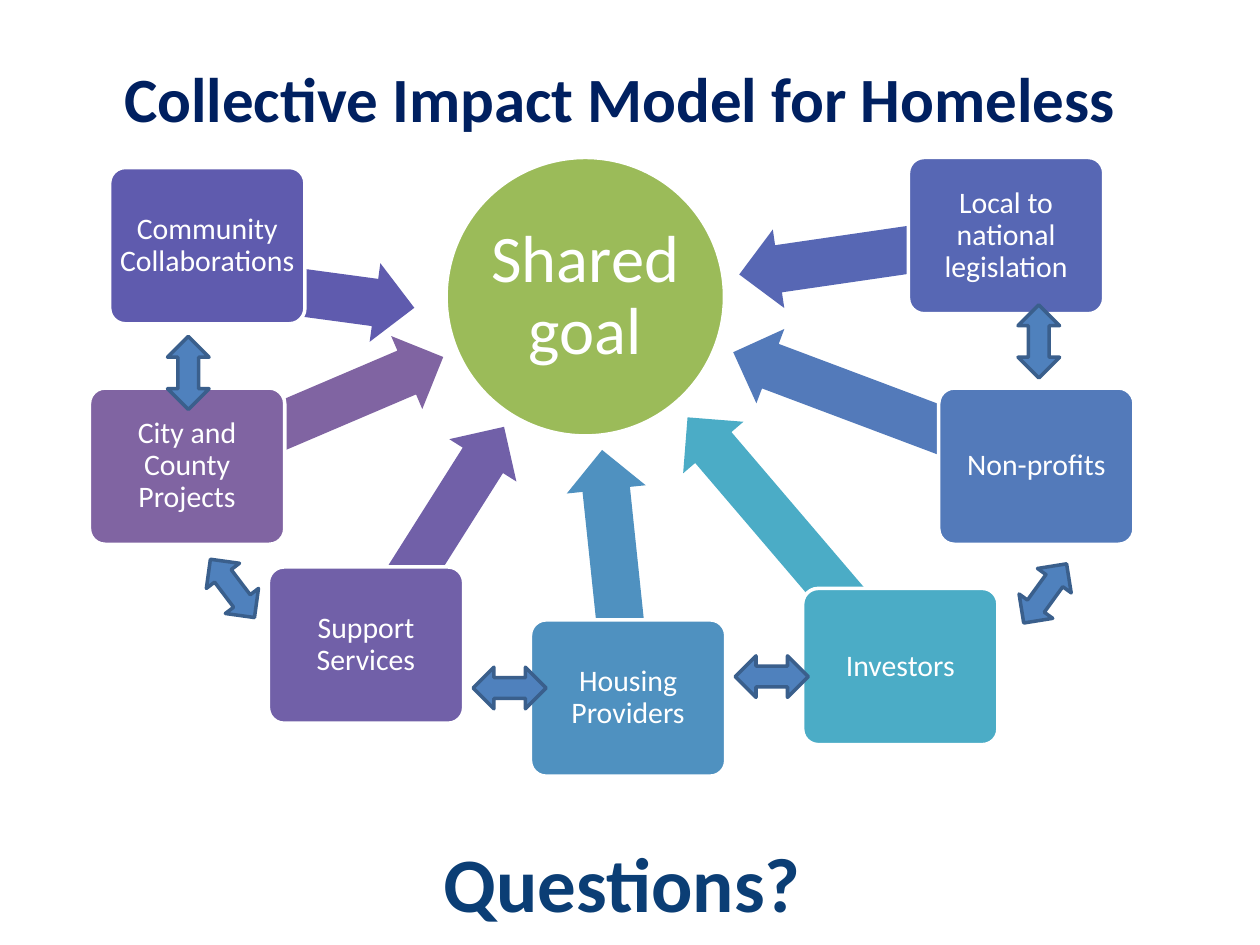
from math import cos, radians, sin

from pptx import Presentation
from pptx.dml.color import RGBColor
from pptx.enum.shapes import MSO_SHAPE
from pptx.enum.text import MSO_ANCHOR, MSO_AUTO_SIZE, PP_ALIGN
from pptx.util import Inches, Pt

ELLIPSE = MSO_SHAPE.OVAL
ROUNDED = MSO_SHAPE.ROUNDED_RECTANGLE
LEFT_ARROW = MSO_SHAPE.LEFT_ARROW
UP_DOWN_ARROW = MSO_SHAPE.UP_DOWN_ARROW
CENTER = PP_ALIGN.CENTER
TOP, MIDDLE = MSO_ANCHOR.TOP, MSO_ANCHOR.MIDDLE
NO_AUTOFIT = MSO_AUTO_SIZE.NONE

FONT = "Calibri"
WHITE = RGBColor(0xFF, 0xFF, 0xFF)
NAVY = RGBColor(0x00, 0x20, 0x60)
DEEP_BLUE = RGBColor(0x0B, 0x3E, 0x75)
GREEN = RGBColor(0x9B, 0xBB, 0x59)
PURPLE = RGBColor(0x80, 0x64, 0xA2)
VIOLET = RGBColor(0x71, 0x60, 0xA8)
INDIGO = RGBColor(0x5F, 0x5B, 0xAE)
SLATE_BLUE = RGBColor(0x57, 0x67, 0xB4)
MID_BLUE = RGBColor(0x53, 0x7A, 0xBA)
SKY_BLUE = RGBColor(0x4F, 0x91, 0xC0)
TEAL = RGBColor(0x4B, 0xAC, 0xC6)
LINK_FILL = RGBColor(0x4F, 0x81, 0xBD)
LINK_LINE = RGBColor(0x3A, 0x5F, 0x8C)

BOX_W, BOX_H = 1.55, 1.24
ARROW_H = 0.63
LINK_W, LINK_H = 0.33, 0.58

# label, left, top, colour, arrow length, arrow rotation, arrow tail offset from box centre
PARTNERS = [
    ("City and County Projects", 0.71, 3.08, PURPLE, 2.21, 156.9, (0, 0)),
    ("Support Services", 2.13, 4.5, VIOLET, 2.05, 122.3, (0, 0)),
    ("Community Collaborations", 0.87, 1.33, INDIGO, 1.81, 187.7, (-0.15, 0.25)),
    ("Local to national legislation", 7.21, 1.25, SLATE_BLUE, 2.14, 351.7, (0, 0)),
    ("Non-profits", 7.45, 3.08, MID_BLUE, 2.57, 20.6, (0, 0)),
    ("Housing Providers", 4.21, 4.92, SKY_BLUE, 1.98, 84, (0, 0)),
    ("Investors", 6.37, 4.67, TEAL, 2.6, 49.5, (0, 0)),
]

# left, top, rotation
LINKS = [
    (1.33, 2.67, 0),
    (1.68, 4.38, 322.9),
    (3.88, 5.17, 270),
    (5.96, 5.08, 90),
    (8.13, 4.42, 35.9),
    (8.08, 2.42, 0),
]


def write(shape, text, size, color, anchor, bold=False, spacing=None):
    """Put centred, wrapped text into a shape."""
    tf = shape.text_frame
    tf.text = text
    tf.word_wrap = True
    tf.auto_size = NO_AUTOFIT
    tf.vertical_anchor = anchor
    p = tf.paragraphs[0]
    p.alignment = CENTER
    if spacing:
        p.line_spacing = spacing
    font = p.runs[0].font
    font.name, font.size, font.bold = FONT, Pt(size), bold
    font.color.rgb = color


def add_filled(slide, kind, box, fill, line=None, rotation=0):
    """Add a flat preset shape with an optional 2 pt outline."""
    sp = slide.shapes.add_shape(kind, *map(Inches, box))
    sp.shadow.inherit = False
    sp.fill.solid()
    sp.fill.fore_color.rgb = fill
    if line is None:
        sp.line.fill.background()
    else:
        sp.line.color.rgb = line
        sp.line.width = Pt(2)
    sp.rotation = rotation
    return sp


def set_margins(shape, inset):
    """Give a shape the same text inset on all four sides."""
    tf = shape.text_frame
    tf.margin_left = tf.margin_right = Inches(inset)
    tf.margin_top = tf.margin_bottom = Inches(inset)


def add_title(slide, box):
    """Place and format the slide title."""
    title = slide.shapes.title
    title.left, title.top, title.width, title.height = map(Inches, box)
    write(title, "Collective Impact Model for Homeless", 36, NAVY, TOP, bold=True)


def add_goal(slide, box):
    """Draw the shared goal circle."""
    goal = add_filled(slide, ELLIPSE, box, GREEN, WHITE)
    set_margins(goal, 0.03)
    write(goal, "Shared goal", 38, WHITE, MIDDLE, spacing=0.9)


def add_partner(slide, box, label, color, length, rotation, offset):
    """Draw a partner box and the arrow that runs from it to the goal."""
    left, top, width, height = box
    angle = radians(rotation)
    center_x = left + width / 2 + offset[0] - length / 2 * cos(angle)
    center_y = top + height / 2 + offset[1] - length / 2 * sin(angle)
    arrow_box = (center_x - length / 2, center_y - ARROW_H / 2, length, ARROW_H)
    arrow = add_filled(slide, LEFT_ARROW, arrow_box, color, rotation=rotation)
    arrow.adjustments[0] = 0.6
    arrow.adjustments[1] = 0.5
    partner = add_filled(slide, ROUNDED, box, color, WHITE)
    partner.adjustments[0] = 0.1
    set_margins(partner, 0.04)
    write(partner, label, 17, WHITE, MIDDLE, spacing=0.9)


def add_questions(slide, box):
    """Add the closing line at the foot of the slide."""
    closing = slide.shapes.add_textbox(*map(Inches, box))
    write(closing, "Questions?", 44, DEEP_BLUE, TOP, bold=True)


def main():
    """Build the slide and save it."""
    prs = Presentation()
    prs.slide_width, prs.slide_height = Inches(10), Inches(7.5)
    slide = prs.slides.add_slide(prs.slide_layouts[5])
    add_goal(slide, (3.54, 1.25, 2.21, 2.21))
    for label, left, top, color, length, rotation, offset in PARTNERS:
        box = (left, top, BOX_W, BOX_H)
        add_partner(slide, box, label, color, length, rotation, offset)
    add_title(slide, (0.67, 0.42, 8.5, 0.71))
    add_questions(slide, (0.47, 6.58, 8.94, 0.92))
    for left, top, rotation in LINKS:
        box = (left, top, LINK_W, LINK_H)
        add_filled(slide, UP_DOWN_ARROW, box, LINK_FILL, LINK_LINE, rotation)
    prs.save("out.pptx")


if __name__ == "__main__":
    main()
